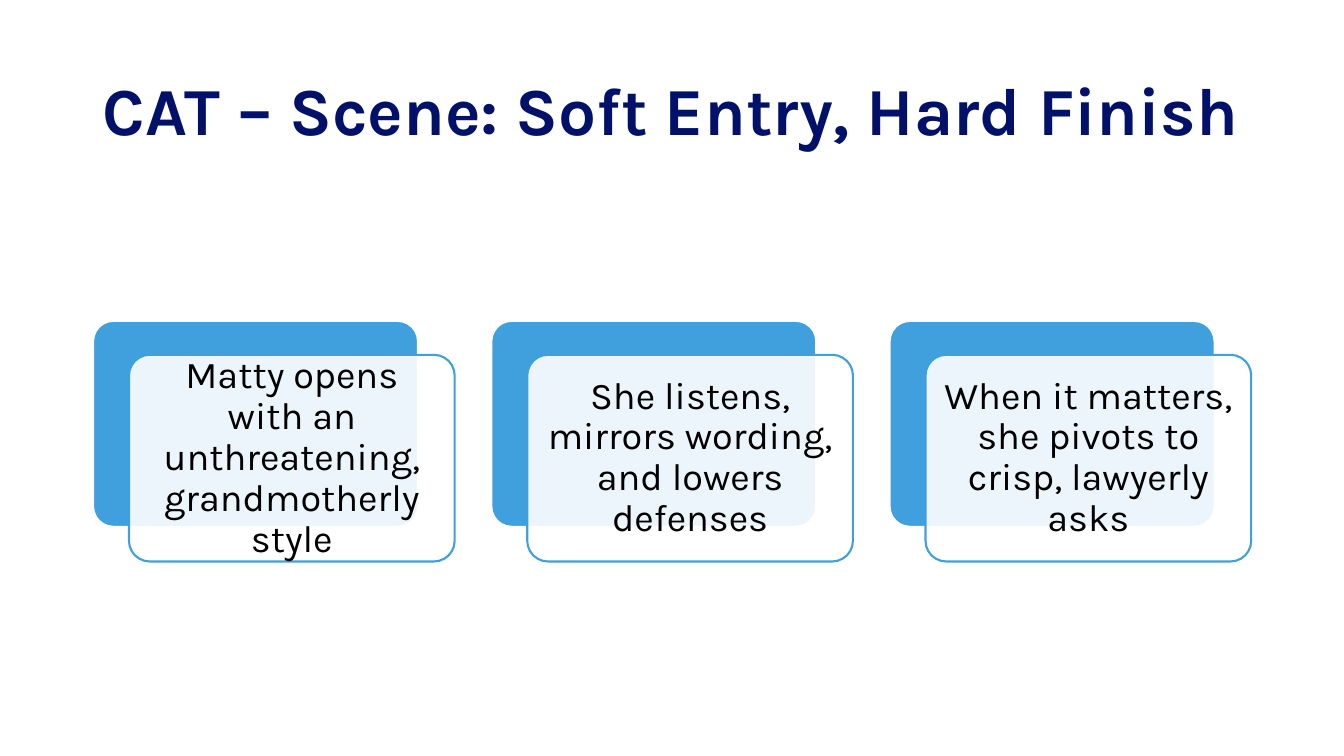
from pptx import Presentation
from pptx.dml.color import RGBColor
from pptx.enum.shapes import MSO_SHAPE
from pptx.enum.text import MSO_ANCHOR, MSO_AUTO_SIZE, PP_ALIGN
from pptx.oxml.ns import qn
from pptx.util import Inches, Pt
from lxml import etree

COLORS = {"title": "011169", "blue": "3FA0DD", "white": "FFFFFF", "text": "000000"}
FONT = "Karla"
STEPS = [
    "Matty opens with an unthreatening, grandmotherly style",
    "She listens, mirrors wording, and lowers defenses",
    "When it matters, she pivots to crisp, lawyerly asks",
]
CARD_W, CARD_H = 3.23, 2.05
OFFSET_X, OFFSET_Y = 0.36, 0.34
INSET = 0.11


def rgb(name):
    return RGBColor.from_string(COLORS[name])


def set_text(tf, text, size, color, align, bold=False):
    tf.text = text
    tf.word_wrap = True
    tf.auto_size = MSO_AUTO_SIZE.NONE
    tf.vertical_anchor = MSO_ANCHOR.MIDDLE
    p = tf.paragraphs[0]
    p.alignment = align
    p.line_spacing = 0.9
    p.space_before = Pt(0)
    font = p.runs[0].font
    font.name, font.size, font.bold = FONT, Pt(size), bold
    font.color.rgb = rgb(color)


def add_title(s, left, top, width, height):
    title = s.shapes.title
    title.left, title.top = Inches(left), Inches(top)
    title.width, title.height = Inches(width), Inches(height)
    set_text(title.text_frame, "CAT – Scene: Soft Entry, Hard Finish",
             48, "title", PP_ALIGN.LEFT, bold=True)


def add_panel(s, left, top, fill, line, line_width):
    panel = s.shapes.add_shape(MSO_SHAPE.ROUNDED_RECTANGLE, Inches(left), Inches(top),
                               Inches(CARD_W), Inches(CARD_H))
    panel.adjustments[0] = 0.1
    panel.shadow.inherit = False
    panel.fill.solid()
    panel.fill.fore_color.rgb = rgb(fill)
    panel.line.color.rgb = rgb(line)
    panel.line.width = Pt(line_width)
    return panel


def add_step(s, left, top, text):
    """Place a blue panel with a translucent text card shifted over it."""
    add_panel(s, left, top, "blue", "white", 2)
    card = add_panel(s, left + OFFSET_X, top + OFFSET_Y, "white", "blue", 1.5)
    color = card.fill._xPr.find(qn("a:solidFill"))[0]
    etree.SubElement(color, qn("a:alpha"), val="90000")
    tf = card.text_frame
    tf.margin_left = tf.margin_right = tf.margin_top = tf.margin_bottom = Inches(INSET)
    set_text(tf, text, 27, "text", PP_ALIGN.CENTER)


def add_steps(s, left, top, width):
    pitch = (width - CARD_W - OFFSET_X) / (len(STEPS) - 1)
    for i, text in enumerate(STEPS):
        add_step(s, left + i * pitch, top, text)


def main():
    prs = Presentation()
    prs.slide_width, prs.slide_height = Inches(13.33), Inches(7.5)
    s = prs.slides.add_slide(prs.slide_layouts[5])
    add_title(s, 0.92, 0.4, 11.5, 1.45)
    add_steps(s, 0.92, 3.18, 11.49)
    prs.save("out.pptx")


if __name__ == "__main__":
    main()
